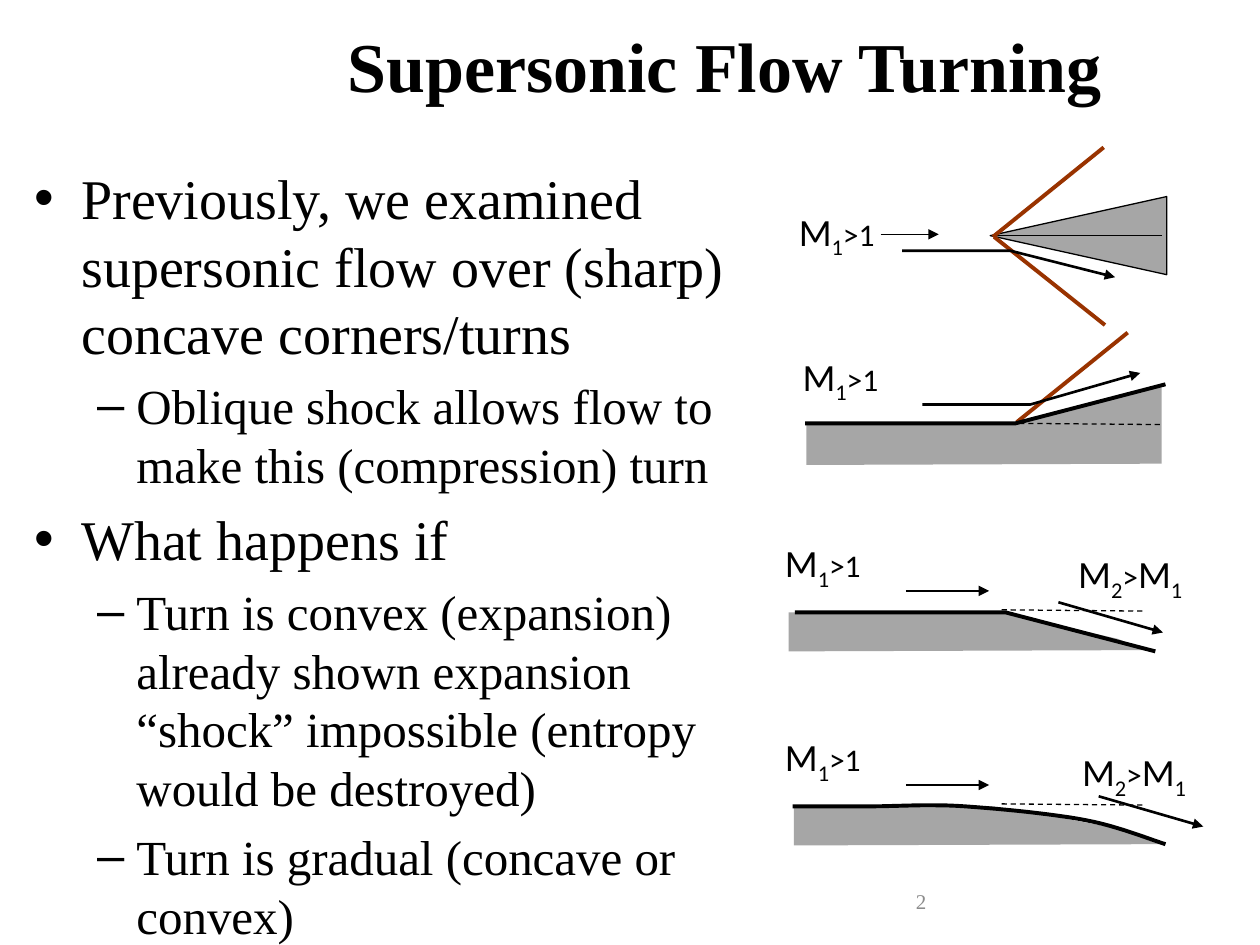
from lxml import etree
from pptx import Presentation
from pptx import util as u
from pptx.dml.color import RGBColor
from pptx.enum import dml, shapes, text
from pptx.oxml import ns

COLORS = {"ink": "000000", "wall": "A6A6A6", "shock": "993300", "number": "8C8C8C"}
SERIF, SANS = "Times New Roman", "Calibri"
UPSTREAM = [("M", 22, False), ("1", 22, True), (">1", 18, False)]
DOWNSTREAM = [("M", 22, False), ("2", 22, True), (">", 18, False),
              ("M", 22, False), ("1", 22, True)]
BULLETS = [
    (0, "Previously, we examined supersonic flow over (sharp) concave corners/turns"),
    (1, "Oblique shock allows flow to make this (compression) turn"),
    (0, "What happens if"),
    (1, "Turn is convex (expansion) already shown expansion “shock” impossible "
        "(entropy would be destroyed)"),
    (1, "Turn is gradual (concave or convex)"),
]


def bezier(start, *segments, steps=12):
    """Return points along a chain of cubic curves."""
    points = [start]
    for a, b, c in segments:
        o = points[-1]
        for i in range(1, steps + 1):
            t = i / steps
            w = ((1 - t) ** 3, 3 * t * (1 - t) ** 2, 3 * t * t * (1 - t), t ** 3)
            points.append(tuple(sum(k * q[d] for k, q in zip(w, (o, a, b, c)))
                                for d in (0, 1)))
    return points


class Deck:
    """Draws styled elements on a slide divided into 100 columns and 75 rows."""

    def __init__(self):
        """Start a presentation with one title-and-content slide."""
        self.prs = Presentation()
        self.prs.slide_width, self.prs.slide_height = u.Inches(10), u.Inches(7.5)
        self.col = self.prs.slide_width / 100
        self.row = self.prs.slide_height / 75
        self.s = self.prs.slides.add_slide(self.prs.slide_layouts[1])

    def at(self, x, y):
        """Convert columns and rows to slide lengths."""
        return round(x * self.col), round(y * self.row)

    def place(self, sp, x, y, w, h):
        """Move and size a shape."""
        sp.left, sp.top = self.at(x, y)
        sp.width, sp.height = self.at(w, h)

    def style(self, r, size, font=SERIF, color="ink", bold=False):
        """Format a run."""
        r.font.size, r.font.name, r.font.bold = u.Pt(size), font, bold
        r.font.color.rgb = RGBColor.from_string(COLORS[color])

    def title(self, words, *box):
        """Fill the title placeholder."""
        sp = self.s.shapes.title
        self.place(sp, *box)
        tf = sp.text_frame
        tf.text = words
        tf.auto_size = text.MSO_AUTO_SIZE.NONE
        tf.vertical_anchor = text.MSO_ANCHOR.MIDDLE
        self.style(tf.paragraphs[0].runs[0], 40, bold=True)

    def bullets(self, items, *box):
        """Fill the body placeholder with a two-level list."""
        sp = self.s.placeholders[1]
        self.place(sp, *box)
        tf = sp.text_frame
        tf.text = "\n".join(words for _, words in items)
        tf.auto_size = text.MSO_AUTO_SIZE.NONE
        for p, (level, _) in zip(tf.paragraphs, items):
            p.level = level
            self.style(p.runs[0], 28 if level else 32)
        tf.paragraphs[0].space_before = u.Pt(0)

    def textbox(self, align, *box):
        """Add a wrapping text box and return its frame."""
        tf = self.s.shapes.add_textbox(*self.at(*box[:2]), *self.at(*box[2:])).text_frame
        tf.word_wrap = True
        tf.paragraphs[0].alignment = align
        return tf

    def number(self, words, *box):
        """Add the slide number."""
        tf = self.textbox(text.PP_ALIGN.RIGHT, *box)
        tf.text = words
        tf.vertical_anchor = text.MSO_ANCHOR.MIDDLE
        self.style(tf.paragraphs[0].runs[0], 12, color="number")

    def label(self, parts, x, y, w):
        """Add a Mach number label with subscripts."""
        p = self.textbox(text.PP_ALIGN.CENTER, x, y, w, 5).paragraphs[0]
        for words, size, sub in parts:
            r = p.add_run()
            r.text = words
            self.style(r, size, SANS)
            if sub:
                r.font._element.set("baseline", "-25000")

    def outline(self, sp, color, width, dash=False, arrow=False):
        """Set the line of a shape or connector."""
        sp.line.color.rgb = RGBColor.from_string(COLORS[color])
        sp.line.width = u.Pt(width)
        if dash:
            sp.line.dash_style = dml.MSO_LINE.DASH
        if arrow:
            ln = sp._element.spPr.find(ns.qn("a:ln"))
            etree.SubElement(ln, ns.qn("a:tailEnd"), type="triangle")

    def line(self, start, end, color="ink", width=0.75, **kind):
        """Add a straight line."""
        sp = self.s.shapes.add_connector(shapes.MSO_CONNECTOR.STRAIGHT,
                                         *self.at(*start), *self.at(*end))
        self.outline(sp, color, width, **kind)
        etree.SubElement(sp._element.spPr, ns.qn("a:effectLst"))

    def freeform(self, points, close=False):
        """Add a freeform through the points."""
        first, *rest = [self.at(*q) for q in points]
        fb = self.s.shapes.build_freeform(*first)
        fb.add_line_segments(rest, close=close)
        sp = fb.convert_to_shape()
        sp.shadow.inherit = False
        return sp

    def fill(self, sp):
        """Fill a solid body."""
        sp.fill.solid()
        sp.fill.fore_color.rgb = RGBColor.from_string(COLORS["wall"])

    def ground(self, *points):
        """Add a filled body without an outline."""
        sp = self.freeform(points, close=True)
        self.fill(sp)
        sp.line.fill.background()

    def stroke(self, points, width=2.25, **kind):
        """Add an open bent or curved line."""
        sp = self.freeform(points)
        sp.fill.background()
        self.outline(sp, "ink", width, **kind)

    def wedge(self, *box, rotation):
        """Add a turned triangular body."""
        sp = self.s.shapes.add_shape(shapes.MSO_SHAPE.ISOSCELES_TRIANGLE,
                                     *self.at(*box[:2]), *self.at(*box[2:]))
        sp.rotation = rotation
        sp.shadow.inherit = False
        self.fill(sp)
        self.outline(sp, "ink", 0.75)


def main():
    """Build the slide."""
    d = Deck()
    d.title("Supersonic Flow Turning", 20, 1.5, 75, 7.3)
    d.bullets(BULLETS, 1.7, 12.5, 60.8, 60)
    d.number("2", 71.7, 69.5, 23.3, 4)

    d.wedge(82.5, 11.7, 6.2, 14, rotation=270)
    d.line((69.9, 18.6), (74.5, 18.6), arrow=True)
    d.label(UPSTREAM, 61.3, 16, 10.2)
    d.line((78.9, 18.7), (92.2, 18.7))
    d.line((78.8, 18.8), (87.6, 11.7), "shock", 2.25)
    d.line((78.9, 18.8), (87.7, 25.8), "shock", 2.25)
    d.stroke([(71.6, 19.9), (80.2, 19.9), (88.5, 22)], 1.5, arrow=True)

    d.ground((64, 33.6), (80.9, 33.6), (92.2, 30.7), (92.2, 36.8), (64, 36.9))
    d.label(UPSTREAM, 61.6, 27.5, 10.2)
    d.line((80.7, 33.5), (89.5, 26.4), "shock", 2.25)
    d.stroke([(73.2, 32.1), (81.8, 32.1), (90.5, 29.6)], 1.5, arrow=True)
    d.stroke([(63.9, 33.6), (80.6, 33.6), (92.5, 30.5)])
    d.line((80.9, 33.6), (92.2, 33.7), dash=True)

    d.ground((62.6, 48.6), (79.5, 48.6), (88.7, 50.7), (90.9, 51.6), (62.6, 51.7))
    d.stroke([(63.1, 48.6), (79.8, 48.6), (91.7, 51.7)])
    d.ground((63, 64), (78.8, 64), (83.1, 64.7), (88.4, 65.7), (92, 67), (63, 67.1))
    d.stroke(bezier((62.9, 64),
                    ((64.8, 64), (66.7, 64), (68.9, 64)),
                    ((71.2, 64), (73.7, 63.8), (76.6, 64)),
                    ((79.5, 64.2), (83.6, 64.6), (86.2, 65.1)),
                    ((88.8, 65.6), (91.2, 66.6), (92.5, 67))))
    for y, shift, label_shift in ((42.3, 0, 0), (57.7, 3.2, 0.3)):
        d.label(UPSTREAM, 60.2, y, 10.2)
        d.line((71.9, y + 4.6), (78.5, y + 4.6), width=1.5, arrow=True)
        d.line((79.5, y + 6.1), (90.9, y + 6.2), dash=True)
        d.line((84 + shift, y + 5.5), (92.3 + shift, y + 7.9), width=1.5, arrow=True)
        d.label(DOWNSTREAM, 83.2 + label_shift, y + 0.9 + label_shift, 13)
    d.prs.save("out.pptx")


if __name__ == "__main__":
    main()
